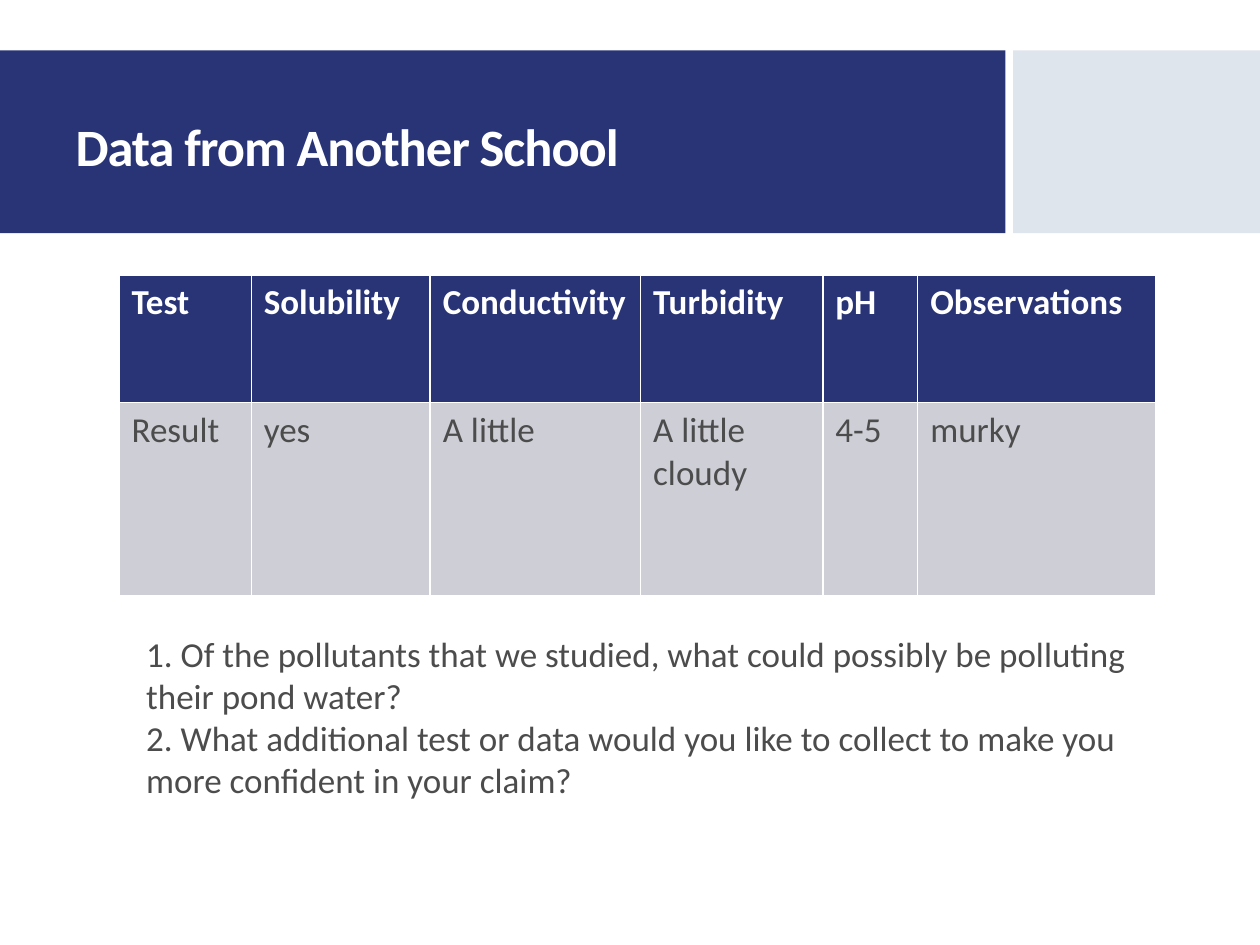
from lxml.etree import SubElement
from pptx import Presentation
from pptx.dml.color import RGBColor
from pptx.enum.shapes import MSO_SHAPE as Shape
from pptx.enum.text import MSO_ANCHOR as Anchor, MSO_AUTO_SIZE as Fit, PP_ALIGN as Align
from pptx.oxml.ns import qn
from pptx.util import Pt

NAVY = RGBColor(0x29, 0x34, 0x76)
PALE = RGBColor(0xDF, 0xE5, 0xED)
GREY = RGBColor(0xCD, 0xCE, 0xD6)
INK = RGBColor(0x4C, 0x4C, 0x4C)
WHITE = RGBColor(0xFF, 0xFF, 0xFF)

TITLE = "Data from Another School"
ROWS = [
    ["Test", "Solubility", "Conductivity", "Turbidity", "pH", "Observations"],
    ["Result", "yes", "A little", "A little cloudy", "4-5", "murky"],
]
ASKS = [
    "1. Of the pollutants that we studied, what could possibly be polluting their pond water?",
    "2. What additional test or data would you like to collect to make you more confident in your claim?",
]
BANDS = [(0, 574.5, NAVY), (579, 141, PALE)]
WIDTHS = [75.6, 102.3, 120.2, 104.2, 54.2, 136]
HEIGHTS = [72.7, 110.2]
LOOKS = [(NAVY, WHITE, True), (GREY, INK, False)]


def place(shape, *box):
    """Move a shape to a box given in points."""
    shape.left, shape.top, shape.width, shape.height = map(Pt, box)


def style(para, size, color, bold=False):
    """Set the font of a whole paragraph."""
    font = para.font
    font.name, font.size, font.bold = "Calibri", Pt(size), bold
    font.color.rgb = color


def add_bands(slide):
    """Draw the header bands behind the title."""
    for spot, (left, width, color) in enumerate(BANDS, 2):
        band = slide.shapes.add_shape(Shape.RECTANGLE, Pt(left), Pt(28.8), Pt(width), Pt(104.4))
        band.shadow.inherit = False
        band.fill.solid()
        band.fill.fore_color.rgb = color
        band.line.fill.background()
        slide.shapes._spTree.insert(spot, band._element)


def add_title(slide):
    """Fill the title placeholder."""
    title = slide.shapes.title
    place(title, 36, 41.8, 499, 87.8)
    frame = title.text_frame
    frame.text = TITLE
    frame.vertical_anchor = Anchor.MIDDLE
    frame.auto_size = Fit.NONE
    para = frame.paragraphs[0]
    para.alignment = Align.LEFT
    para.line_spacing = 0.9
    style(para, 30, WHITE, True)
    para.runs[0]._r.get_or_add_rPr().set("spc", "-60")


def add_results(slide):
    """Add the table of test results."""
    table = slide.shapes.add_table(
        len(ROWS), len(WIDTHS), Pt(68), Pt(157.3), Pt(sum(WIDTHS)), Pt(sum(HEIGHTS))
    ).table
    for col, width in zip(table.columns, WIDTHS):
        col.width = Pt(width)
    for row, height, texts, (fill, ink, bold) in zip(table.rows, HEIGHTS, ROWS, LOOKS):
        row.height = Pt(height)
        for cell, text in zip(row.cells, texts):
            cell.text = text
            cell.fill.solid()
            cell.fill.fore_color.rgb = fill
            style(cell.text_frame.paragraphs[0], 20, ink, bold)


def add_asks(slide):
    """Fill the body placeholder with the questions."""
    body = slide.placeholders[1]
    place(body, 76.3, 357.8, 584, 104.4)
    frame = body.text_frame
    frame.text = "\n".join(ASKS)
    frame.auto_size = Fit.NONE
    for para in frame.paragraphs:
        props = para._p.get_or_add_pPr()
        props.set("marL", "0")
        props.set("indent", "0")
        SubElement(props, qn("a:buNone"))
        para.space_before = Pt(0)
        style(para, 20, INK)


def main():
    """Build and save the slide."""
    deck = Presentation()
    deck.slide_width, deck.slide_height = Pt(720), Pt(540)
    slide = deck.slides.add_slide(deck.slide_layouts[1])
    add_bands(slide)
    add_title(slide)
    add_results(slide)
    add_asks(slide)
    deck.save("out.pptx")


if __name__ == "__main__":
    main()
